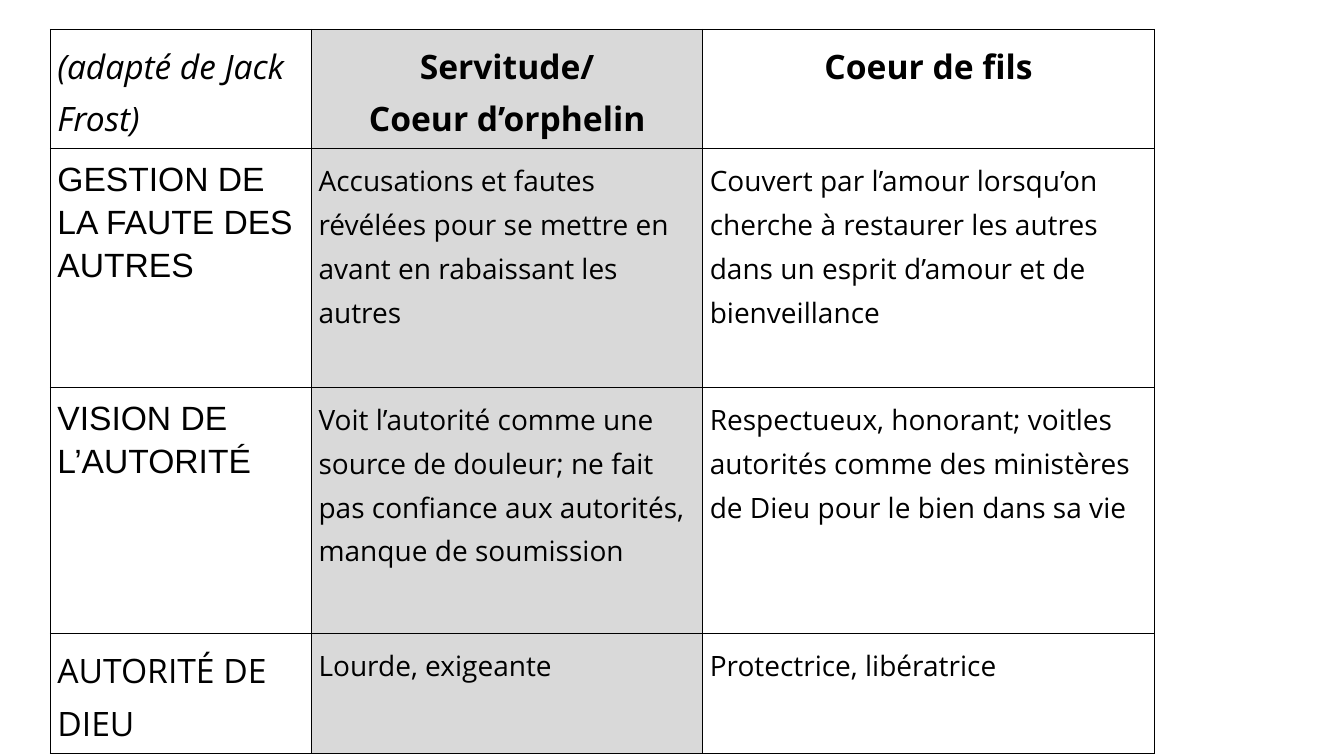
import lxml.etree
import pptx
import pptx.dml.color
import pptx.enum.text
import pptx.oxml.ns
import pptx.util

EMU_PER_PX = 9144  # 100 px to the inch
COLORS = {"text": "000000", "border": "000000", "orphan": "D9D9D9"}
COLUMN_WIDTHS = [259, 388, 448]
ROW_HEIGHTS = [100, 237, 244, 103]
ORPHAN_COLUMN = 1
CELL_MARGIN = 7
BORDER_POINTS = 0.75

FORMATS = {
    "source": {"name": "Open Sans", "size": pptx.util.Pt(24), "italic": True},
    "heading": {"name": "Open Sans", "size": pptx.util.Pt(24), "bold": True},
    "topic": {"name": "Arial", "size": pptx.util.Pt(24)},
    "open_topic": {"name": "Open Sans", "size": pptx.util.Pt(24)},
    "body": {"name": "Open Sans", "size": pptx.util.Pt(20)},
}

ROWS = [
    [
        ("source", "(adapté de Jack Frost)"),
        ("heading", "Servitude/\nCoeur d’orphelin"),
        ("heading", "Coeur de fils"),
    ],
    [
        ("topic", "GESTION DE LA FAUTE DES AUTRES"),
        ("body", "Accusations et fautes révélées pour se mettre en avant "
                 "en rabaissant les autres"),
        ("body", "Couvert par l’amour lorsqu’on cherche à restaurer les autres "
                 "dans un esprit d’amour et de bienveillance"),
    ],
    [
        ("topic", "VISION DE L’AUTORITÉ"),
        ("body", "Voit l’autorité comme une source de douleur; ne fait pas "
                 "confiance aux autorités, manque de soumission"),
        ("body", "Respectueux, honorant; voitles autorités comme des ministères "
                 "de Dieu pour le bien dans sa vie"),
    ],
    [
        ("open_topic", "AUTORITÉ DE DIEU"),
        ("body", "Lourde, exigeante"),
        ("body", "Protectrice, libératrice"),
    ],
]


def px(length):
    return pptx.util.Emu(length * EMU_PER_PX)


def rgb(name):
    return pptx.dml.color.RGBColor.from_string(COLORS[name])


def add_borders(cell):
    """Outline all four sides; call before the fill, which must follow in the XML."""
    properties = cell._tc.get_or_add_tcPr()
    qualify = pptx.oxml.ns.qn
    for side in ("a:lnL", "a:lnR", "a:lnT", "a:lnB"):
        line = lxml.etree.SubElement(
            properties, qualify(side), w=str(pptx.util.Pt(BORDER_POINTS)))
        fill = lxml.etree.SubElement(line, qualify("a:solidFill"))
        lxml.etree.SubElement(fill, qualify("a:srgbClr"), val=COLORS["border"])


def fill_cell(cell, color):
    if color:
        cell.fill.solid()
        cell.fill.fore_color.rgb = rgb(color)
    else:
        cell.fill.background()


def write_cell(cell, kind, text):
    for side in ("left", "right", "top", "bottom"):
        setattr(cell, f"margin_{side}", px(CELL_MARGIN))
    cell.text_frame.text = text
    for paragraph in cell.text_frame.paragraphs:
        paragraph.line_spacing = 1.15
        if kind == "heading":
            paragraph.alignment = pptx.enum.text.PP_ALIGN.CENTER
        for run in paragraph.runs:
            for attribute, value in FORMATS[kind].items():
                setattr(run.font, attribute, value)
            run.font.color.rgb = rgb("text")


def add_comparison_table(slide, left, top):
    table = slide.shapes.add_table(
        len(ROWS), len(COLUMN_WIDTHS), px(left), px(top),
        px(sum(COLUMN_WIDTHS)), px(sum(ROW_HEIGHTS))).table
    table.first_row = False
    table.horz_banding = False
    for column, width in zip(table.columns, COLUMN_WIDTHS):
        column.width = px(width)
    for row, height in zip(table.rows, ROW_HEIGHTS):
        row.height = px(height)
    for row_index, entries in enumerate(ROWS):
        for column_index, (kind, text) in enumerate(entries):
            cell = table.cell(row_index, column_index)
            write_cell(cell, kind, text)
            add_borders(cell)
            fill_cell(cell, "orphan" if column_index == ORPHAN_COLUMN else None)


def main():
    presentation = pptx.Presentation()
    presentation.slide_width = px(1333)
    presentation.slide_height = px(750)
    slide = presentation.slides.add_slide(presentation.slide_layouts[6])
    add_comparison_table(slide, 50, 29)
    presentation.save("out.pptx")


if __name__ == "__main__":
    main()
